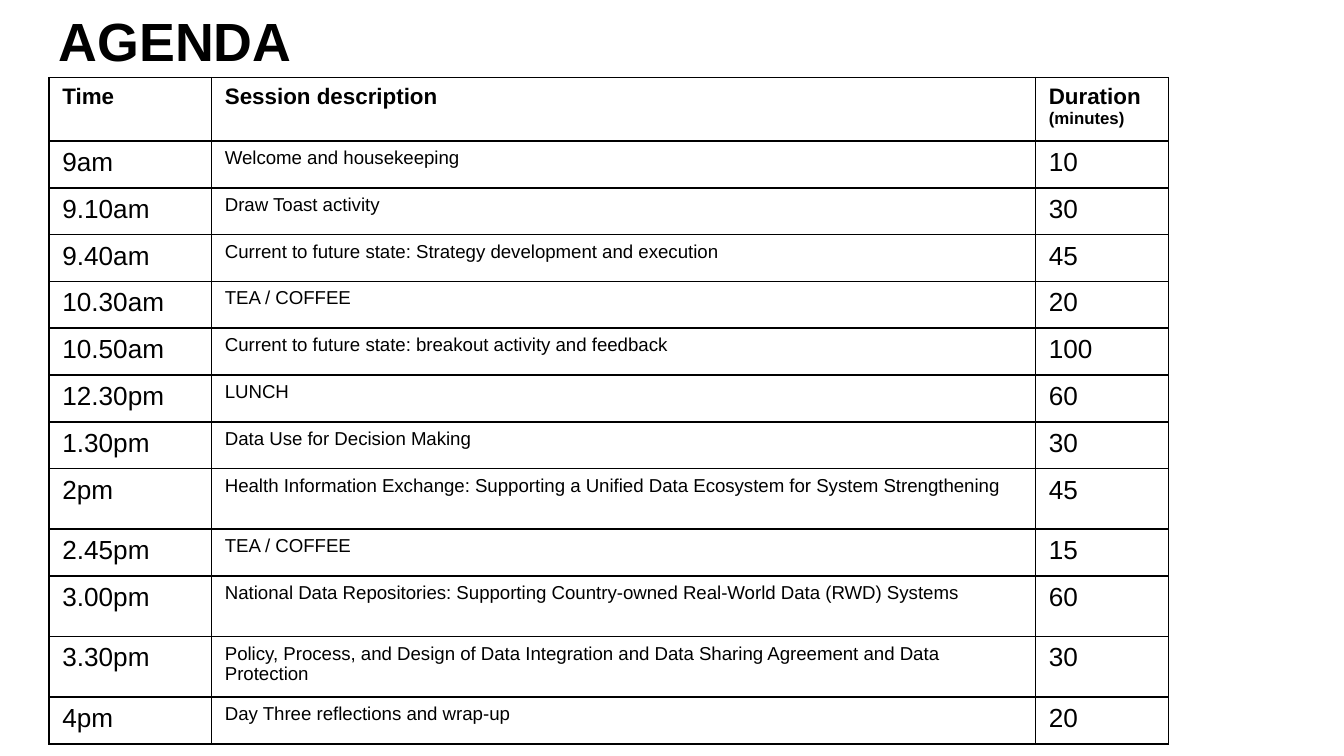
from lxml.etree import SubElement
from pptx import Presentation
from pptx.dml.color import RGBColor
from pptx.enum.text import MSO_ANCHOR, PP_ALIGN
from pptx.oxml.ns import qn
from pptx.util import Pt

COLUMN_WIDTHS = [87.1, 441.4, 71.3]
HEADER_HEIGHT = 33.9
ROW_HEIGHT = 25.1
TALL_HEIGHT = 32.4
TALL_TIMES = {"2pm", "3.00pm", "3.30pm"}

HEADER = [
    [("Time", 12)],
    [("Session description", 12)],
    [("Duration ", 12), ("(minutes)", 9)],
]
SESSIONS = [
    ("9am", "Welcome and housekeeping", 10),
    ("9.10am", "Draw Toast activity", 30),
    ("9.40am", "Current to future state: Strategy development and execution", 45),
    ("10.30am", "TEA / COFFEE", 20),
    ("10.50am", "Current to future state: breakout activity and feedback", 100),
    ("12.30pm", "LUNCH", 60),
    ("1.30pm", "Data Use for Decision Making", 30),
    ("2pm", "Health Information Exchange: Supporting a Unified Data Ecosystem for System Strengthening", 45),
    ("2.45pm", "TEA / COFFEE", 15),
    ("3.00pm", "National Data Repositories: Supporting Country-owned Real-World Data (RWD) Systems", 60),
    ("3.30pm", "Policy, Process, and Design of Data Integration and Data Sharing Agreement and Data Protection", 30),
    ("4pm", "Day Three reflections and wrap-up", 20),
]


def color(value):
    return RGBColor.from_string(value)


class AgendaPage:
    font_name = "Arial"
    ink = "000000"
    paper = "FFFFFF"

    def __init__(self, deck):
        self.page = deck.slides.add_slide(deck.slide_layouts[5])
        self.page.background.fill.solid()
        self.page.background.fill.fore_color.rgb = color(self.paper)

    def style(self, font, bold):
        font.name = self.font_name
        font.bold = bold
        font.color.rgb = color(self.ink)

    def title(self, text, left, top, width, height, size):
        box = self.page.shapes.title
        box.left, box.top, box.width, box.height = map(Pt, (left, top, width, height))
        frame = box.text_frame
        frame.text = text
        frame.word_wrap = True
        frame.vertical_anchor = MSO_ANCHOR.BOTTOM
        frame.margin_left = frame.margin_right = Pt(5.4)
        frame.margin_top = frame.margin_bottom = Pt(2.7)
        para = frame.paragraphs[0]
        para.alignment = PP_ALIGN.LEFT
        para.line_spacing = 0.9
        para.font.size = Pt(size)
        self.style(para.font, True)

    def border(self, cell):
        properties = cell._tc.get_or_add_tcPr()
        for index, side in enumerate(("lnL", "lnR", "lnT", "lnB")):
            line = properties.makeelement(qn(f"a:{side}"), {"w": str(Pt(1))})
            properties.insert(index, line)
            fill = SubElement(line, qn("a:solidFill"))
            SubElement(fill, qn("a:srgbClr"), val=self.ink)

    def cell(self, cell, spans, bold):
        cell.fill.background()
        self.border(cell)
        para = cell.text_frame.paragraphs[0]
        self.style(para.font, bold)
        para.font.size = Pt(spans[0][1])
        for text, size in spans:
            span = para.add_run()
            span.text = text
            if size != spans[0][1]:
                span.font.size = Pt(size)

    def table(self, rows, left, top, widths, heights):
        frame = self.page.shapes.add_table(
            len(rows), len(widths), Pt(left), Pt(top), Pt(sum(widths)), Pt(sum(heights))
        )
        table = frame.table
        table.horz_banding = False
        for column, width in zip(table.columns, widths):
            column.width = Pt(width)
        for number, (row, height) in enumerate(zip(rows, heights)):
            table.rows[number].height = Pt(height)
            for cell, spans in zip(table.rows[number].cells, row):
                self.cell(cell, spans, number == 0)


def main():
    deck = Presentation()
    deck.slide_width, deck.slide_height = Pt(720), Pt(405)
    agenda = AgendaPage(deck)
    agenda.title("AGENDA", 26, 0, 147, 41.6, 28.8)
    rows = [HEADER] + [
        [[(time, 14)], [(session, 10)], [(str(minutes), 14)]]
        for time, session, minutes in SESSIONS
    ]
    heights = [HEADER_HEIGHT] + [
        TALL_HEIGHT if time in TALL_TIMES else ROW_HEIGHT for time, _, _ in SESSIONS
    ]
    agenda.table(rows, 26.2, 41.6, COLUMN_WIDTHS, heights)
    deck.save("out.pptx")


if __name__ == "__main__":
    main()
